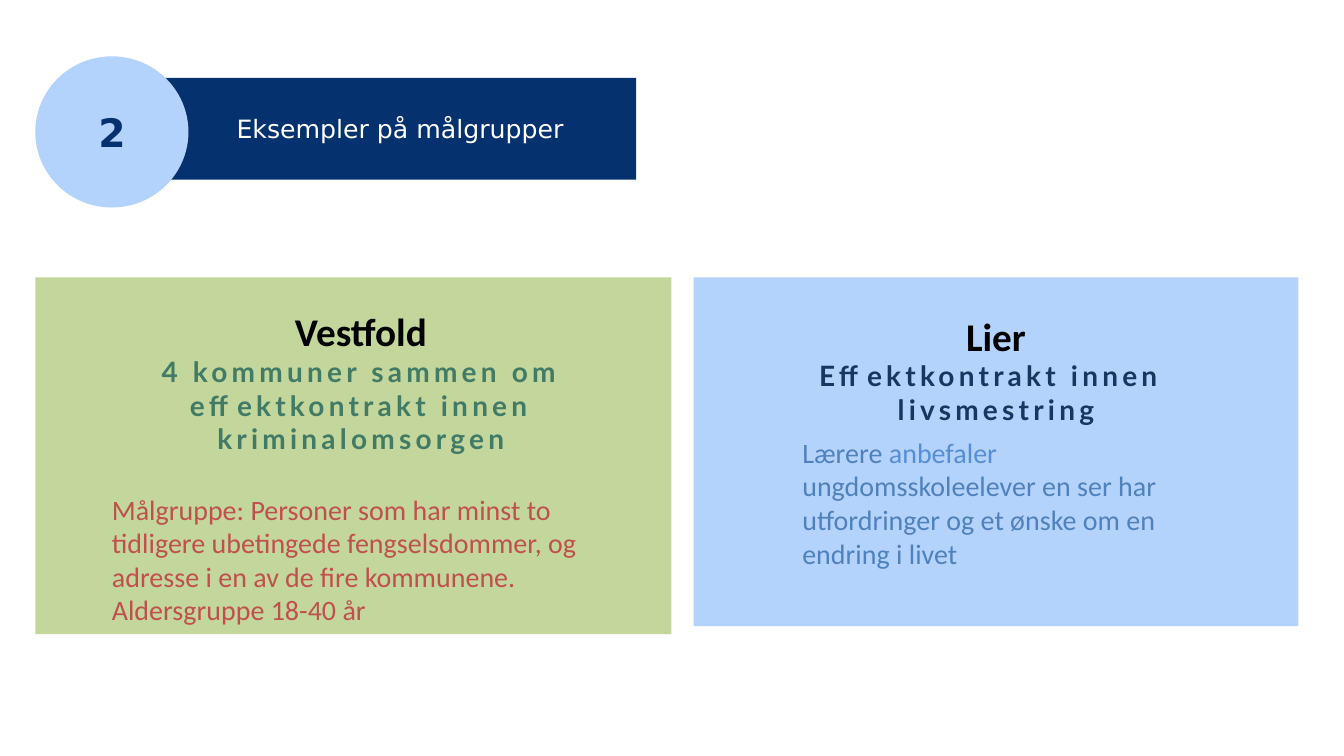
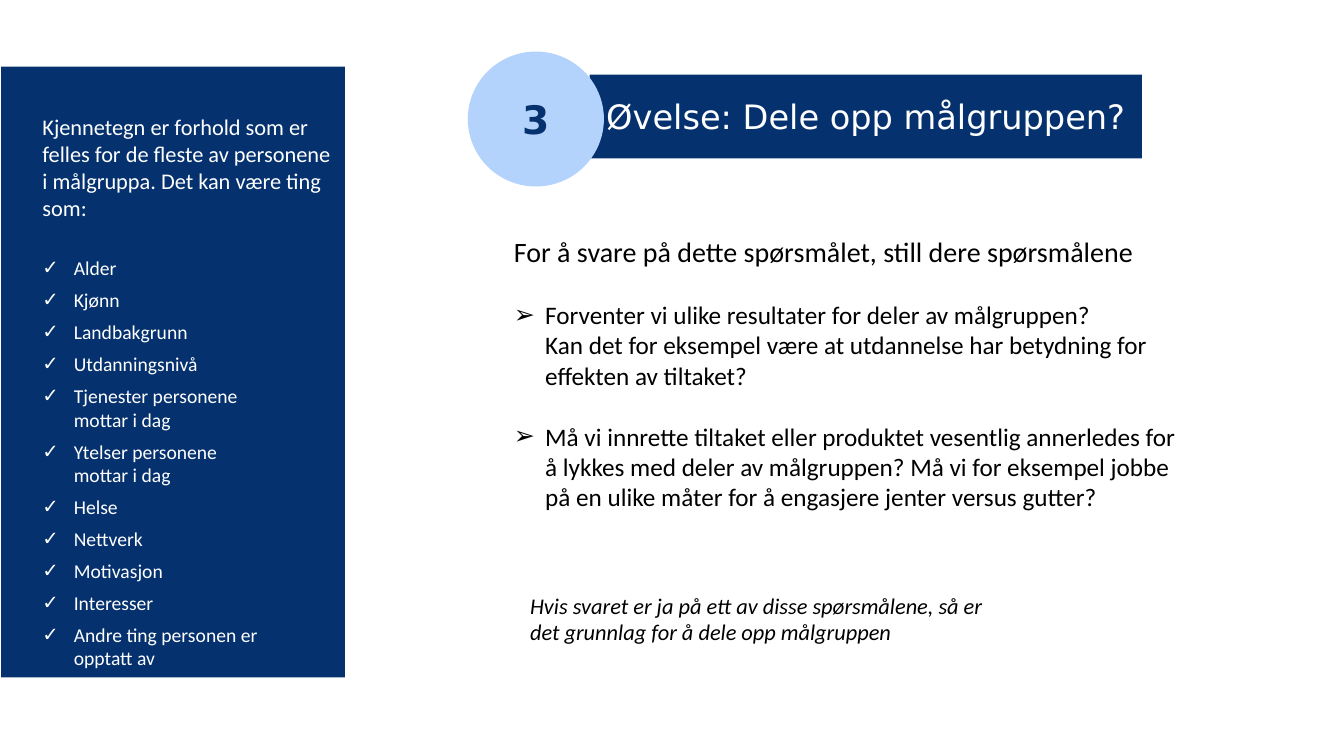
"""Two slides on choosing and splitting target groups."""
from copy import deepcopy
from dataclasses import dataclass
from typing import NamedTuple, Optional

from lxml import etree
from pptx import Presentation
from pptx import util as u
from pptx.dml.color import RGBColor
from pptx.enum import shapes, text
from pptx.oxml import ns

NAVY = RGBColor(0x05, 0x32, 0x6E)
SKY = RGBColor(0xB3, 0xD2, 0xFC)
SAGE = RGBColor(0xC3, 0xD6, 0x9B)
PINE = RGBColor(0x41, 0x7B, 0x66)
BRICK = RGBColor(0xC0, 0x50, 0x4D)
MIDNIGHT = RGBColor(0x17, 0x37, 0x5E)
STEEL = RGBColor(0x4F, 0x81, 0xBD)
AZURE = RGBColor(0x55, 0x8E, 0xD5)
BLACK = RGBColor(0, 0, 0)
WHITE = RGBColor(0xFF, 0xFF, 0xFF)

HEADING_FONT = "DejaVu Sans"
BODY_FONT = "Calibri"
LEAD_FONT = "Lato"
CENTER = text.PP_ALIGN.CENTER
LEFT = text.PP_ALIGN.LEFT
MIDDLE = text.MSO_ANCHOR.MIDDLE
TOP = text.MSO_ANCHOR.TOP
HANG = u.Cm(0.79)


class Box(NamedTuple):
    """Left, top, width and height in centimetres."""
    left: float
    top: float
    width: float
    height: float


class Insets(NamedTuple):
    """Left, top, right and bottom text margins in centimetres."""
    left: float = 0.25
    top: float = 0.13
    right: float = 0.25
    bottom: float = 0.13


TIGHT = Insets(0.2, 0.1, 0.2, 0.1)
FLUSH = Insets(0, 0, 0, 0)


@dataclass(frozen=True)
class Words:
    """A stretch of text in one style."""
    content: str
    size: float
    color: RGBColor = BLACK
    font: str = BODY_FONT
    bold: bool = False
    italic: bool = False
    tracking: float = 0


@dataclass(frozen=True)
class Para:
    """A paragraph with its alignment, space and bullet."""
    words: tuple[Words, ...]
    align: text.PP_ALIGN = LEFT
    before: float = 0
    bullet: Optional[str] = None


@dataclass(frozen=True)
class Card:
    """A municipality card with a note on its target group."""
    box: Box
    fill: RGBColor
    insets: Insets
    place: str
    lead: str
    lead_color: RGBColor
    note_box: Box
    note: tuple[Words, ...]


CARDS = (
    Card(Box(0.89, 6.99, 16.03, 8.99), SAGE, Insets(1.09, 0.76, 0.71, 0.1), "Vestfold",
         "4 kommuner sammen om effektkontrakt innen kriminalomsorgen", PINE,
         Box(2.82, 12.4, 12.5, 3.45),
         (Words("Målgruppe: Personer som har minst to tidligere ubetingede fengselsdommer, "
                "og adresse i en av de fire kommunene. Aldersgruppe 18-40 år", 20, BRICK),)),
    Card(Box(17.48, 6.99, 15.24, 8.79), SKY, Insets(0.2, 0.87, 0.2, 0.1), "Lier",
         "Effektkontrakt innen \nlivsmestring", MIDNIGHT,
         Box(20.22, 10.97, 10.4, 3.43),
         (Words("Lærere ", 20, STEEL), Words("anbefaler", 20, AZURE),
          Words(" ungdomsskoleelever en ser har utfordringer og et ønske om en "
                "endring i livet", 20, STEEL))),
)

TRAITS_INTRO = ("Kjennetegn er forhold som er felles for de fleste av personene "
                "i målgruppa. Det kan være ting som:")
TRAITS = ("Alder", "Kjønn", "Landbakgrunn", "Utdanningsnivå",
          "Tjenester personene \nmottar i dag", "Ytelser personene \nmottar i dag",
          "Helse", "Nettverk", "Motivasjon", "Interesser",
          "Andre ting personen er \nopptatt av")

QUESTIONS_INTRO = "For å svare på dette spørsmålet, still dere spørsmålene"
QUESTIONS = (
    "Forventer vi ulike resultater for deler av målgruppen? \n"
    "Kan det for eksempel være at utdannelse har betydning for effekten av tiltaket?",
    "Må vi innrette tiltaket eller produktet vesentlig annerledes for å lykkes med "
    "deler av målgruppen? Må vi for eksempel jobbe på en ulike måter for å engasjere "
    "jenter versus gutter?",
)
CONCLUSION = ("Hvis svaret er ja på ett av disse spørsmålene, så er det grunnlag "
              "for å dele opp målgruppen")


def add_words(paragraph, words: Words) -> None:
    """Add one styled run for each line of the words."""
    for number, line in enumerate(words.content.split("\n")):
        if number:
            paragraph.add_line_break()
            paragraph._p[-1].append(deepcopy(run._r.rPr))
        run = paragraph.add_run()
        run.text = line
        font = run.font
        font.name, font.size = words.font, u.Pt(words.size)
        font.bold, font.italic = words.bold, words.italic
        font.color.rgb = words.color
        if words.tracking:
            run._r.rPr.set("spc", str(int(words.tracking * 100)))


def set_bullet(paragraph, bullet: Optional[str]) -> None:
    """Give a paragraph a hanging bullet, or none."""
    props = paragraph._p.get_or_add_pPr()
    props.set("marL", str(HANG if bullet else 0))
    props.set("indent", str(-HANG if bullet else 0))
    if bullet:
        etree.SubElement(props, ns.qn("a:buChar")).set("char", bullet)
    else:
        etree.SubElement(props, ns.qn("a:buNone"))


def write(shape, paras: tuple[Para, ...], insets: Insets, anchor=TOP) -> None:
    """Fill a shape's text frame with paragraphs."""
    frame = shape.text_frame
    frame.word_wrap = True
    frame.auto_size = text.MSO_AUTO_SIZE.NONE
    frame.vertical_anchor = anchor
    (frame.margin_left, frame.margin_top,
     frame.margin_right, frame.margin_bottom) = map(u.Cm, insets)
    for number, para in enumerate(paras):
        paragraph = frame.add_paragraph() if number else frame.paragraphs[0]
        set_bullet(paragraph, para.bullet)
        paragraph.alignment = para.align
        paragraph.space_before = u.Pt(para.before)
        for words in para.words:
            add_words(paragraph, words)


def paint(shape, fill: RGBColor) -> None:
    """Give a shape a plain fill and no outline."""
    shape.fill.solid()
    shape.fill.fore_color.rgb = fill
    shape.line.fill.background()


def place(shape, box: Box) -> None:
    """Move and size a placeholder."""
    shape.left, shape.top, shape.width, shape.height = map(u.Cm, box)


def add_panel(slide, kind: shapes.MSO_SHAPE, box: Box, fill: RGBColor):
    """Add a flat filled shape."""
    panel = slide.shapes.add_shape(kind, *map(u.Cm, box))
    panel.shadow.inherit = False
    paint(panel, fill)
    return panel


def add_note(slide, box: Box, words: tuple[Words, ...], insets: Insets) -> None:
    """Add a text box with one paragraph."""
    write(slide.shapes.add_textbox(*map(u.Cm, box)), (Para(words),), insets)


def add_heading(slide, title: str, size: float, band: Box, number: str, disc: Box) -> None:
    """Set the title on its navy band beside a numbered disc."""
    heading = slide.shapes.title
    place(heading, band)
    paint(heading, NAVY)
    write(heading, (Para((Words(title, size, WHITE, HEADING_FONT),), CENTER),), TIGHT, MIDDLE)
    badge = add_panel(slide, shapes.MSO_SHAPE.OVAL, disc, SKY)
    numeral = Words(number, 28, NAVY, HEADING_FONT, bold=True)
    write(badge, (Para((numeral,), CENTER),), TIGHT, MIDDLE)


def add_card(slide, card: Card) -> None:
    """Draw a municipality card and its note."""
    panel = add_panel(slide, shapes.MSO_SHAPE.RECTANGLE, card.box, card.fill)
    name = Words(card.place, 28, bold=True)
    lead = Words(card.lead, 20, card.lead_color, LEAD_FONT, bold=True, tracking=3)
    write(panel, (Para((name,), CENTER), Para((lead,), CENTER)), card.insets)
    add_note(slide, card.note_box, card.note, FLUSH)


def bullets(items: tuple[str, ...], size: float, color: RGBColor, mark: str,
            first_gap: float, gap: float) -> tuple[Para, ...]:
    """Return bulleted paragraphs, the first set further down."""
    return tuple(Para((Words(item, size, color),), LEFT, gap if number else first_gap, mark)
                 for number, item in enumerate(items))


def build_examples(deck) -> None:
    """Build the slide with example target groups."""
    slide = deck.slides.add_slide(deck.slide_layouts.get_by_name("Title Only"))
    add_heading(slide, "Eksempler på målgrupper", 18, Box(4.14, 1.96, 11.89, 2.57),
                "2", Box(0.89, 1.42, 3.86, 3.81))
    for card in CARDS:
        add_card(slide, card)


def build_exercise(deck) -> None:
    """Build the slide with the exercise on splitting the group."""
    slide = deck.slides.add_slide(deck.slide_layouts.get_by_name("Two Content"))
    add_heading(slide, "Øvelse: Dele opp målgruppen?", 24, Box(14.86, 1.88, 13.92, 2.11),
                "3", Box(11.79, 1.3, 3.43, 3.4))
    traits, questions = slide.placeholders[1], slide.placeholders[2]
    place(traits, Box(0.03, 1.68, 8.66, 15.39))
    paint(traits, NAVY)
    write(traits, (Para((Words(TRAITS_INTRO, 16, WHITE),)),
                   *bullets(TRAITS, 14, WHITE, "✓", 25.5, 6)),
          Insets(1.04, 1.17, 0.18, 0.1))
    place(questions, Box(12.7, 5.79, 17.48, 7.26))
    write(questions, (Para((Words(QUESTIONS_INTRO, 20),)),
                      *bullets(QUESTIONS, 18, BLACK, "➢", 22, 22)), Insets())
    add_note(slide, Box(13.11, 14.78, 12.75, 1.63),
             (Words(CONCLUSION, 16, italic=True),), Insets())


def main() -> None:
    """Build and save the deck."""
    deck = Presentation()
    deck.slide_width, deck.slide_height = u.Cm(33.87), u.Cm(19.05)
    build_examples(deck)
    build_exercise(deck)
    deck.save("out.pptx")


if __name__ == "__main__":
    main()
